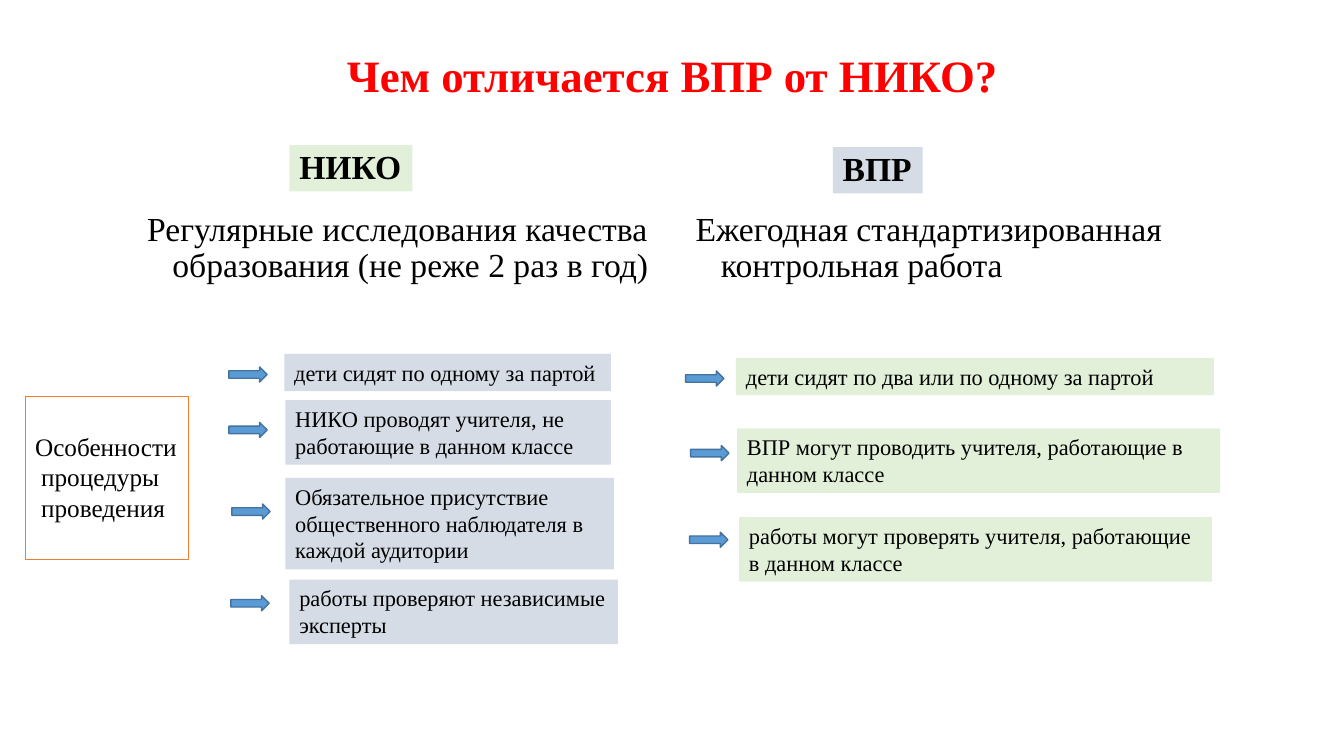
from lxml import etree
from pptx import Presentation
from pptx import util as u
from pptx.dml.color import RGBColor
from pptx.enum import shapes, text
from pptx.oxml import ns

FONT = "Times New Roman"
COLORS = {
    "title": "FF0000",
    "text": "000000",
    "blue": "D6DCE5",
    "green": "E2F0D9",
    "frame": "ED7D31",
    "arrow": "5B9BD5",
    "arrow_line": "43739E",
}
ARROW_SIZE = (0.38, 0.15)
NIKO_FEATURES = [
    ("дети сидят по одному за партой", (2.82, 3.51, 3.24, 0.37), (2.27, 3.64)),
    ("НИКО проводят учителя, не работающие в данном классе", (2.83, 3.97, 3.23, 0.64), (2.27, 4.19)),
    ("Обязательное присутствие общественного наблюдателя в каждой аудитории",
     (2.83, 4.74, 3.26, 0.91), (2.3, 5)),
    ("работы проверяют независимые эксперты", (2.87, 5.75, 3.26, 0.64), (2.29, 5.91)),
]
VPR_FEATURES = [
    ("дети сидят по два или по одному за партой", (7.3, 3.55, 4.74, 0.37), (6.8, 3.68)),
    ("ВПР могут проводить учителя, работающие в данном классе", (7.31, 4.25, 4.79, 0.64), (6.85, 4.42)),
    ("работы могут проверять учителя, работающие в данном классе", (7.33, 5.13, 4.69, 0.64), (6.84, 5.28)),
]


def color(name):
    """Return the named colour."""
    return RGBColor.from_string(COLORS[name])


def inches(values):
    """Convert numbers to lengths."""
    return [u.Inches(value) for value in values]


def style(paragraph, size, color_name="text", bold=False):
    """Set the font of a whole paragraph."""
    font = paragraph.font
    font.name, font.size, font.bold = FONT, u.Pt(size), bold
    font.color.rgb = color(color_name)


def indent(paragraph, left, first_line=0):
    """Set a paragraph's indents and remove its bullet."""
    properties = paragraph._p.get_or_add_pPr()
    properties.set("marL", str(u.Inches(left)))
    properties.set("indent", str(u.Inches(first_line)))
    etree.SubElement(properties, ns.qn("a:buNone"))


def fill_placeholder(placeholder, words, place):
    """Move a placeholder and write its paragraph."""
    placeholder.left, placeholder.top, placeholder.width, placeholder.height = inches(place)
    placeholder.text_frame.text = words
    paragraph = placeholder.text_frame.paragraphs[0]
    paragraph.line_spacing = 0.9
    paragraph.space_before = u.Pt(0)
    return paragraph


def add_title(slide, words, place):
    """Write the slide title."""
    paragraph = fill_placeholder(slide.shapes.title, words, place)
    slide.shapes.title.text_frame.vertical_anchor = text.MSO_ANCHOR.MIDDLE
    paragraph.alignment = text.PP_ALIGN.CENTER
    style(paragraph, 32, "title", True)


def add_definition(slide, index, words, place):
    """Write one body placeholder with a hanging indent."""
    paragraph = fill_placeholder(slide.placeholders[index], words, place)
    indent(paragraph, 0.25, -0.25)
    style(paragraph, 24)


def add_box(slide, words, place, fill=None, size=16, bold=False, wrap=True):
    """Add a text box with an optional fill."""
    box = slide.shapes.add_textbox(*inches(place))
    if fill:
        box.fill.solid()
        box.fill.fore_color.rgb = color(fill)
    box.text_frame.word_wrap = wrap
    box.text_frame.text = words
    for paragraph in box.text_frame.paragraphs:
        style(paragraph, size, bold=bold)
    return box


def add_heading(slide, words, place, fill):
    """Add a column heading."""
    box = add_box(slide, words, place, fill, 24, True, False)
    box.text_frame.paragraphs[0].line_spacing = 0.9


def add_frame(slide, lines, place):
    """Add the outlined label for the procedure."""
    box = add_box(slide, "\n".join(lines), place, size=18)
    box.line.color.rgb = color("frame")
    box.line.width = u.Pt(0.75)
    box.text_frame.margin_top = u.Inches(0.35)
    for paragraph in box.text_frame.paragraphs[1:]:
        paragraph._p.get_or_add_pPr().set("marL", str(u.Inches(0.06)))


def add_arrow(slide, place):
    """Add a small arrow pointing right."""
    arrow = slide.shapes.add_shape(shapes.MSO_SHAPE.RIGHT_ARROW, *inches(place + ARROW_SIZE))
    arrow.shadow.inherit = False
    arrow.fill.solid()
    arrow.fill.fore_color.rgb = color("arrow")
    arrow.line.color.rgb = color("arrow_line")
    arrow.line.width = u.Pt(1)


def add_features(slide, features, fill):
    """Add a column of features with their arrows."""
    for words, box_place, arrow_place in features:
        add_box(slide, words, box_place, fill)
        add_arrow(slide, arrow_place)


def main():
    """Build and save the slide."""
    presentation = Presentation()
    presentation.slide_width, presentation.slide_height = inches((13.33, 7.5))
    slide = presentation.slides.add_slide(presentation.slide_layouts[3])
    add_title(slide, "Чем отличается ВПР от НИКО?", (0.92, 0.4, 11.5, 0.75))
    add_definition(slide, 1, "Регулярные исследования качества образования (не реже 2 раз в год)",
                   (1.36, 2.06, 5.67, 1.44))
    add_definition(slide, 2, "Ежегодная стандартизированная контрольная работа", (6.8, 2.06, 5.67, 1.1))
    add_heading(slide, "НИКО", (2.87, 1.44, 1.22, 0.46), "green")
    add_heading(slide, "ВПР", (8.26, 1.46, 0.89, 0.46), "blue")
    add_frame(slide, ["Особенности", "процедуры", "проведения"], (0.25, 3.93, 1.62, 1.62))
    add_features(slide, NIKO_FEATURES, "blue")
    add_features(slide, VPR_FEATURES, "green")
    presentation.save("out.pptx")


if __name__ == "__main__":
    main()
